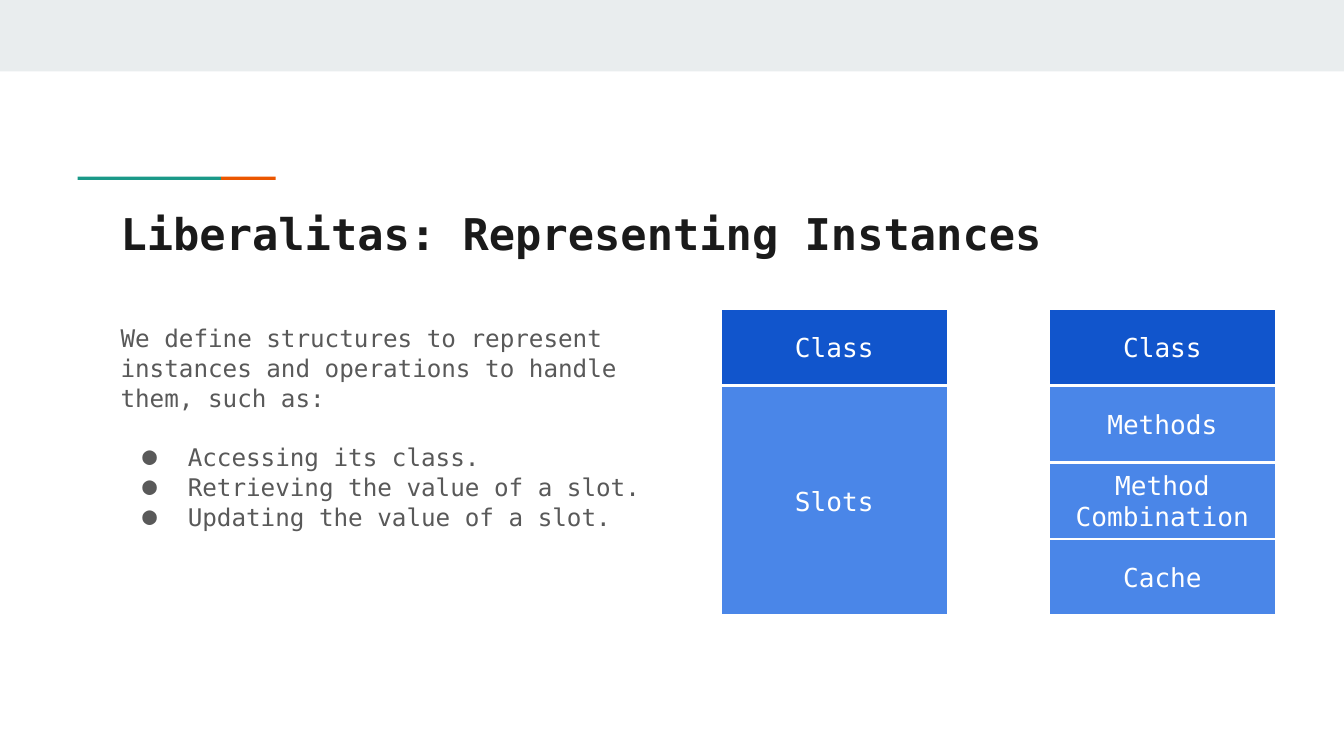
from lxml import etree
from pptx import Presentation
from pptx.dml.color import RGBColor
from pptx.enum import shapes, text
from pptx.oxml import ns
from pptx.util import Cm, Pt

FONT = "DejaVu Sans Mono"
BAND = RGBColor(0xE9, 0xED, 0xEE)
TEAL = RGBColor(0x1A, 0x99, 0x88)
ORANGE = RGBColor(0xEB, 0x56, 0x00)
INK = RGBColor(0x1A, 0x1A, 0x1A)
GREY = RGBColor(0x59, 0x59, 0x59)
DARK_BLUE = RGBColor(0x11, 0x55, 0xCC)
LIGHT_BLUE = RGBColor(0x4A, 0x86, 0xE8)
WHITE = RGBColor(0xFF, 0xFF, 0xFF)

# Content
TITLE = "Liberalitas: Representing Instances"
INTRO = ("We define structures to represent instances and operations "
         "to handle them, such as:")
OPERATIONS = [
    "Accessing its class.",
    "Retrieving the value of a slot.",
    "Updating the value of a slot.",
]
# Each stack: left edge in cm, then (label, height in rows, fill)
STACKS = [
    (13.61, [("Class", 1, DARK_BLUE), ("Slots", 3, LIGHT_BLUE)]),
    (19.81, [("Class", 1, DARK_BLUE), ("Methods", 1, LIGHT_BLUE),
             ("Method Combination", 1, LIGHT_BLUE), ("Cache", 1, LIGHT_BLUE)]),
]
# Accent rule: left, width in cm, fill
ACCENTS = [(1.47, 2.71, TEAL), (4.18, 1.03, ORANGE)]

SLIDE_W, SLIDE_H = 25.4, 14.29
MARGIN = 2.03
STACK_TOP, STACK_W, ROW_H = 5.84, 4.32, 1.45

deck = Presentation()
deck.slide_width, deck.slide_height = Cm(SLIDE_W), Cm(SLIDE_H)
slide = deck.slides.add_slide(deck.slide_layouts[6])


def write(holder, paragraphs, size, color, bold=False, spacing=None,
          align=text.PP_ALIGN.LEFT, anchor=text.MSO_ANCHOR.TOP):
    """Fill a shape with paragraphs in one format and return its text frame."""
    frame = holder.text_frame
    frame.word_wrap = True
    frame.vertical_anchor = anchor
    frame.margin_left = frame.margin_right = Cm(0.25)
    frame.margin_top = frame.margin_bottom = Cm(0.25)
    for number, words in enumerate(paragraphs):
        paragraph = frame.add_paragraph() if number else frame.paragraphs[0]
        paragraph.alignment = align
        paragraph.line_spacing = spacing
        run = paragraph.add_run()
        run.text = words
        run.font.name, run.font.size = FONT, Pt(size)
        run.font.bold, run.font.color.rgb = bold, color
    return frame


def add_box(left, top, width, height, fill, outline=None):
    box = slide.shapes.add_shape(shapes.MSO_SHAPE.RECTANGLE,
                                 Cm(left), Cm(top), Cm(width), Cm(height))
    box.shadow.inherit = False
    box.fill.solid()
    box.fill.fore_color.rgb = fill
    if outline is None:
        box.line.fill.background()
    else:
        box.line.color.rgb = outline
        box.line.width = Pt(1.5)
    return box


def add_bullet(paragraph, color):
    props = paragraph._p.get_or_add_pPr()
    props.set("marL", str(Cm(1.27)))
    props.set("indent", str(-Cm(0.86)))
    bullet_color = etree.SubElement(props, ns.qn("a:buClr"))
    etree.SubElement(bullet_color, ns.qn("a:srgbClr"), val=str(color))
    etree.SubElement(props, ns.qn("a:buFont"), typeface=FONT)
    etree.SubElement(props, ns.qn("a:buChar"), char="●")


# Top band and accent rule
add_box(0, 0, SLIDE_W, 1.35, BAND)
for left, width, fill in ACCENTS:
    add_box(left, 3.34, width, 0.06, fill)

# Title
title = slide.shapes.add_textbox(Cm(MARGIN), Cm(3.66), Cm(21.36), Cm(1.5))
write(title, [TITLE], 23.4, INK, bold=True)

# Memory layout stacks
for left, cells in STACKS:
    top = STACK_TOP
    for label, rows, fill in cells:
        cell = add_box(left, top, STACK_W, rows * ROW_H, fill, WHITE)
        write(cell, [label], 14, WHITE, align=text.PP_ALIGN.CENTER,
              anchor=text.MSO_ANCHOR.MIDDLE)
        top += rows * ROW_H

# Introduction and bulleted operations
body = slide.shapes.add_textbox(Cm(MARGIN), Cm(STACK_TOP), Cm(10.67), Cm(4.39))
frame = write(body, [INTRO, *OPERATIONS], 13, GREY, spacing=1.03)
operations = frame.paragraphs[1:]
operations[0].space_before = Pt(15.5)
for operation in operations:
    add_bullet(operation, GREY)

deck.save("out.pptx")
